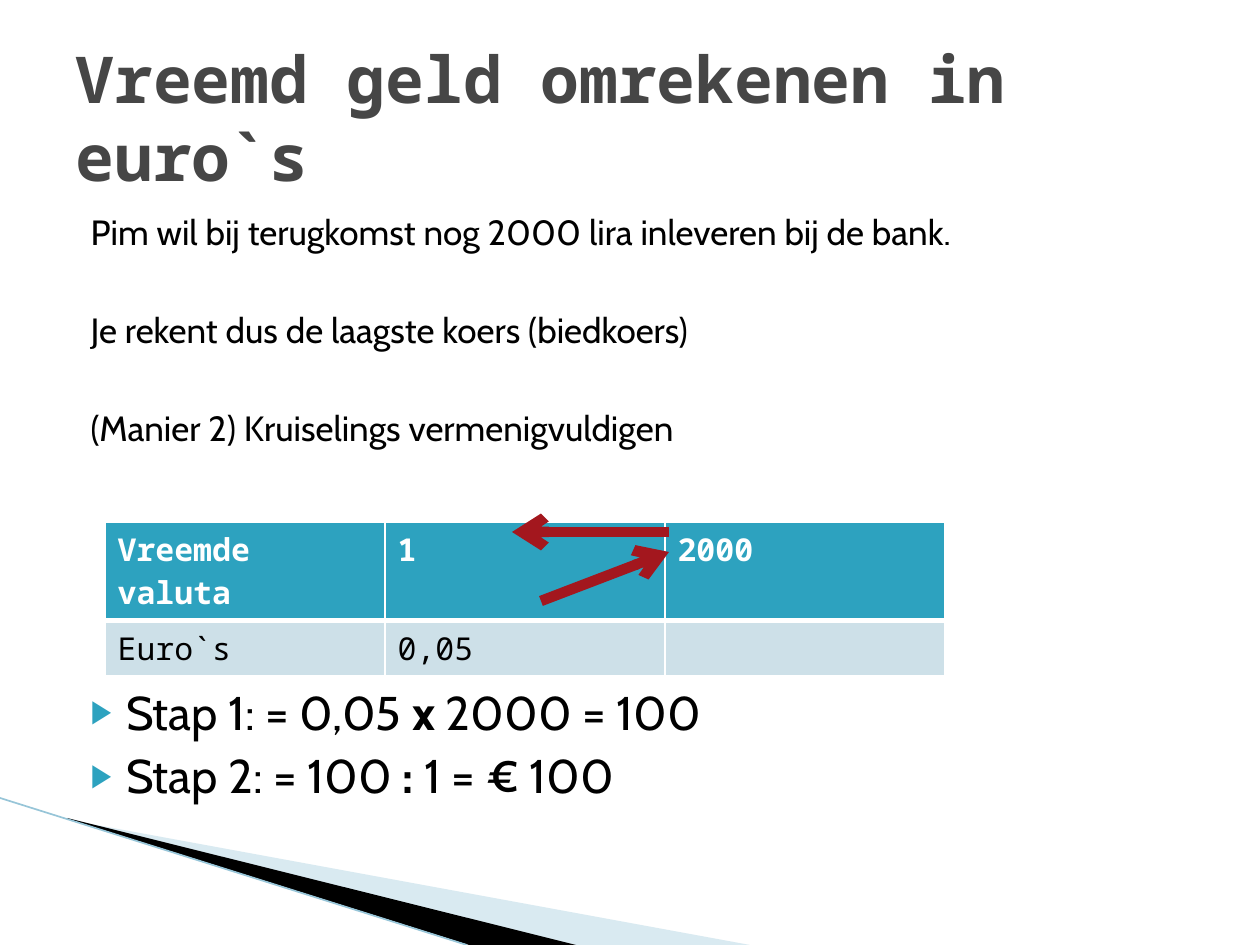
"""Build a slide on converting foreign money into euros."""
from lxml import etree
from pptx import Presentation, util as u
from pptx.dml import color
from pptx.enum import shapes, text
from pptx.oxml import ns

PX = 914400 / 126
THEME = {
    "title_font": "Noto Sans Mono", "body_font": "Cabin",
    "title_size": 36.9, "intro_size": 20, "step_size": 27, "table_size": 18,
    "title": "464646", "ink": "000000", "accent": "2DA2BF", "white": "FFFFFF",
    "band": "CDE0E8", "arrow": "A3171E", "wedge": "A0CBDC", "edge": "97C5D8",
}
TITLE = "Vreemd geld omrekenen in euro`s"
INTRO = [
    ("Pim wil bij terugkomst nog 2000 lira inleveren bij de bank.", 0),
    ("Je rekent dus de laagste koers (biedkoers)", 32),
    ("(Manier 2) Kruiselings vermenigvuldigen", 32),
]
STEPS = [
    (("Stap 1: = 0,05 ", "x", " 2000 = 100"), 134),
    (("Stap 2: = 100 ", ": ", "1 = € 100"), 4),
]
RATES = [("Vreemde valuta", "1", "2000"), ("Euro`s", "0,05", "")]
ARROWS = [((541, 601), (669, 552)), ((669, 532), (512, 532))]
WEDGES = [
    ([(69, 820), (750, 945), (575, 945), (69, 819)], "wedge", 40),
    ([(67, 818), (576, 945), (469, 945), (68, 819)], "ink", 100),
]
EDGE = ((0, 798), (467, 945))


def px(value):
    return u.Emu(round(value * PX))


def rgb(name):
    return color.RGBColor.from_string(THEME[name])


def child(parent, tag, **attributes):
    return etree.SubElement(parent, ns.qn(tag), attributes)


def style(font, family, size, ink, bold=False):
    font.name, font.size, font.bold = THEME[family], u.Pt(THEME[size]), bold
    font.color.rgb = rgb(ink)


def place(shape, left, top, width, height):
    shape.left, shape.top, shape.width, shape.height = map(px, (left, top, width, height))


def add_line(slide, ends, ink, width):
    line = slide.shapes.add_connector(
        shapes.MSO_CONNECTOR.STRAIGHT, *(px(v) for point in ends for v in point))
    line.line.color.rgb = rgb(ink)
    line.line.width = u.Pt(width)
    child(line._element.spPr, "a:effectLst")
    return line


def add_wedge(slide, points, ink, opacity):
    builder = slide.shapes.build_freeform(*points[0], scale=PX)
    builder.add_line_segments(points[1:], close=True)
    wedge = builder.convert_to_shape()
    wedge.shadow.inherit = False
    wedge.line.fill.background()
    wedge.fill.solid()
    wedge.fill.fore_color.rgb = rgb(ink)
    if opacity < 100:
        fill = wedge._element.spPr.find(ns.qn("a:solidFill"))
        child(fill[0], "a:alpha", val=str(opacity * 1000))
    return wedge


def add_backdrop(slide):
    parts = [add_wedge(slide, *wedge) for wedge in WEDGES]
    parts.append(add_line(slide, EDGE, "edge", 0.95))
    for index, part in enumerate(parts, 2):
        slide.shapes._spTree.insert(index, part._element)


def indent(paragraph, left, first, bullet):
    properties = paragraph._p.get_or_add_pPr()
    properties.set("marL", str(u.Inches(left)))
    properties.set("indent", str(u.Inches(first)))
    if bullet:
        child(child(properties, "a:buClr"), "a:srgbClr", val=THEME["accent"])
        child(properties, "a:buSzPct", val="68000")
        child(properties, "a:buChar", char="▶")
    else:
        child(properties, "a:buNone")


def fill_title(title):
    place(title, 63, 38, 1134, 157)
    frame = title.text_frame
    frame.text = TITLE
    frame.auto_size = text.MSO_AUTO_SIZE.NONE
    frame.vertical_anchor = text.MSO_ANCHOR.MIDDLE
    heading = frame.paragraphs[0]
    heading.alignment = text.PP_ALIGN.LEFT
    style(heading.font, "title_font", "title_size", "title", True)


def fill_body(body):
    place(body, 63, 204, 1134, 624)
    frame = body.text_frame
    frame.auto_size = text.MSO_AUTO_SIZE.NONE
    rows = [((words,), gap, 0.12, 0, "intro_size") for words, gap in INTRO]
    rows += [(words, gap, 0.4, -0.28, "step_size") for words, gap in STEPS]
    for index, (words, gap, left, first, size) in enumerate(rows):
        paragraph = frame.add_paragraph() if index else frame.paragraphs[0]
        paragraph.space_before = u.Pt(gap)
        indent(paragraph, left, first, bullet=first < 0)
        style(paragraph.font, "body_font", size, "ink")
        for position, part in enumerate(words):
            run = paragraph.add_run()
            run.text = part
            if position == 1:
                run.font.bold = True


def add_borders(cell, bottom):
    properties = cell._tc.get_or_add_tcPr()
    for side, width in (("L", 1), ("R", 1), ("T", 1), ("B", bottom)):
        border = child(properties, "a:ln" + side, w=str(u.Pt(width)))
        child(child(border, "a:solidFill"), "a:srgbClr", val=THEME["white"])


def add_rates(slide):
    table = slide.shapes.add_table(
        len(RATES), len(RATES[0]), px(105), px(522), px(840), px(102)).table
    for row, values in enumerate(RATES):
        header = row == 0
        for column, value in enumerate(values):
            cell = table.cell(row, column)
            cell.text = value
            add_borders(cell, 3 if header else 1)
            cell.fill.solid()
            cell.fill.fore_color.rgb = rgb("accent" if header else "band")
            style(cell.text_frame.paragraphs[0].font, "title_font", "table_size",
                  "white" if header else "ink", header)


def main():
    deck = Presentation()
    deck.slide_width, deck.slide_height = px(1260), px(945)
    slide = deck.slides.add_slide(deck.slide_layouts[1])
    add_backdrop(slide)
    fill_title(slide.shapes.title)
    fill_body(slide.placeholders[1])
    add_rates(slide)
    for ends in ARROWS:
        arrow = add_line(slide, ends, "arrow", 6)
        child(arrow.line._get_or_add_ln(), "a:tailEnd", type="arrow")
    deck.save("out.pptx")


if __name__ == "__main__":
    main()
